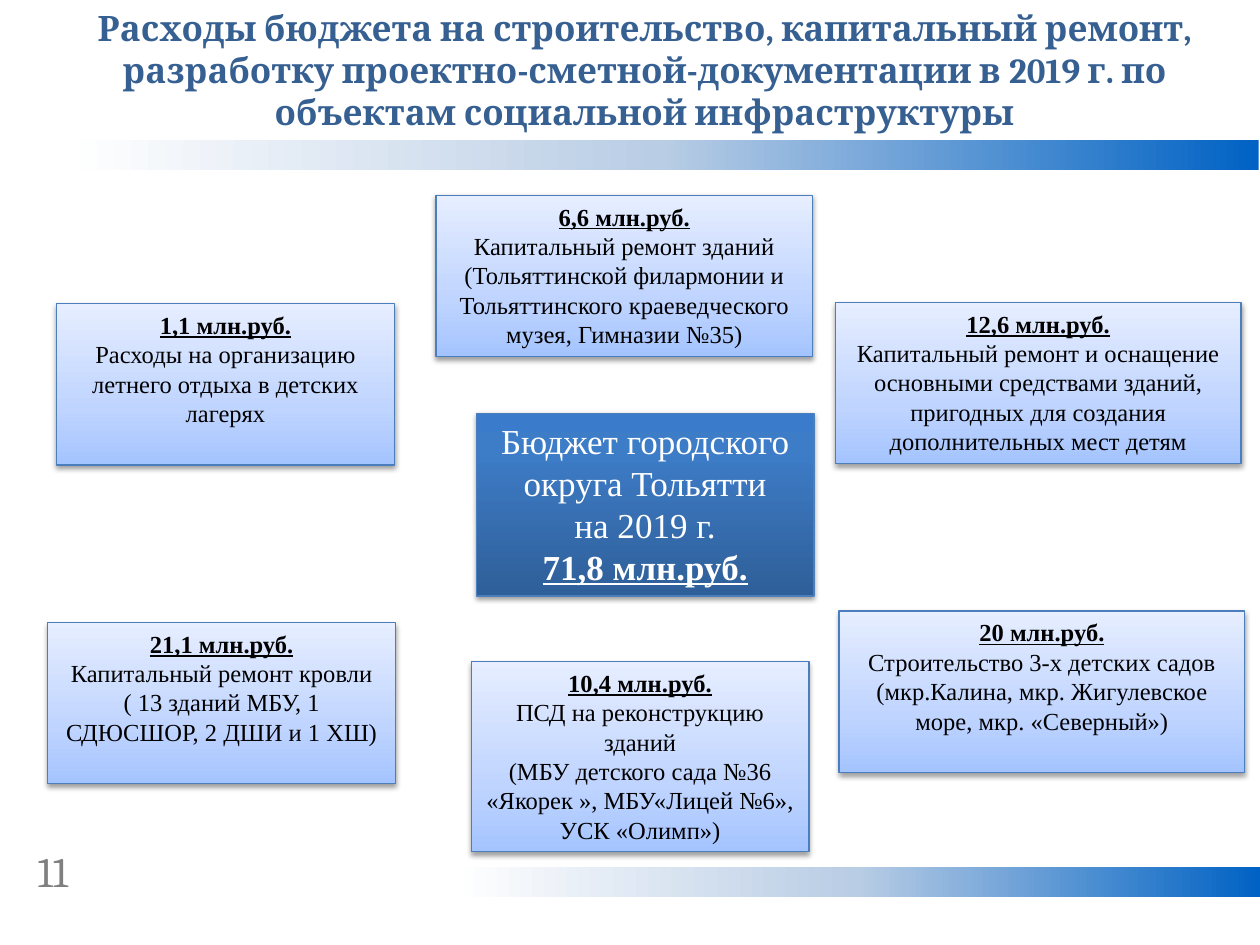
from lxml import etree
from pptx import Presentation
from pptx.dml.color import RGBColor
from pptx.enum.shapes import MSO_SHAPE
from pptx.enum.text import MSO_ANCHOR, MSO_AUTO_SIZE, PP_ALIGN
from pptx.oxml import parse_xml
from pptx.oxml.ns import nsdecls
from pptx.util import Inches, Pt

COLORS = {"title": "376092", "number": "808080", "outline": "4B7EBC",
          "dark": "000000", "light": "FFFFFF"}
BAND = [(0, "0062C4"), (50, "B9CDE5"), (100, "FFFFFF")]
PALE = [(0, "A4C4FF"), (35, "BFD4FF"), (100, "E6EEFF")]
DEEP = [(0, "2F5F99"), (80, "3D7CC7"), (100, "3A7CCB")]


def add_gradient_box(place, stops, angle):
    box = slide.shapes.add_shape(MSO_SHAPE.RECTANGLE, *map(Inches, place))
    box.shadow.inherit = False
    box.line.fill.background()
    stop_xml = "".join(f'<a:gs pos="{pos * 1000}"><a:srgbClr val="{color}"/></a:gs>'
                       for pos, color in stops)
    box._element.spPr.insert(2, parse_xml(
        f'<a:gradFill {nsdecls("a")} rotWithShape="1"><a:gsLst>{stop_xml}</a:gsLst>'
        f'<a:lin ang="{angle * 60000}" scaled="0"/></a:gradFill>'))
    return box


def style(paragraph, font_name, size, color, bold=False, underline=False):
    font = paragraph.font
    font.name, font.size = font_name, Pt(size)
    font.bold, font.underline = bold, underline
    font.color.rgb = RGBColor.from_string(COLORS[color])


prs = Presentation()
prs.slide_width, prs.slide_height = Inches(10), Inches(7.5)
slide = prs.slides.add_slide(prs.slide_layouts[5])

for band in [(0.5, 1.11, 9.49, 0.24), (3.58, 6.88, 6.42, 0.24)]:
    add_gradient_box(band, BAND, 180)

title = slide.shapes.title
title.left, title.top, title.width, title.height = map(Inches, (0.35, 0, 9.53, 1.11))
title.text_frame.text = ("Расходы бюджета на строительство, капитальный ремонт, "
                         "разработку проектно-сметной-документации в 2019 г. по "
                         "объектам социальной инфраструктуры")
title.text_frame.auto_size = MSO_AUTO_SIZE.NONE
title.text_frame.vertical_anchor = MSO_ANCHOR.TOP
title.text_frame.paragraphs[0].alignment = PP_ALIGN.CENTER
style(title.text_frame.paragraphs[0], "Cambria", 20, "title", bold=True)

page_number = slide.shapes.add_textbox(*map(Inches, (0.2, 6.66, 0.78, 0.5))).text_frame
page_number.word_wrap = True
page_number.text = "11"
style(page_number.paragraphs[0], "Cambria", 24, "number")

expenses = [
    ((0.38, 4.94, 2.76, 1.28),
     ["21,1 млн.руб.", "Капитальный ремонт кровли",
      "( 13 зданий МБУ, 1\vСДЮСШОР, 2 ДШИ и 1 ХШ)"]),
    ((3.46, 1.55, 2.99, 1.28),
     ["6,6 млн.руб.", "Капитальный ремонт зданий",
      "(Тольяттинской филармонии и Тольяттинского краеведческого музея, Гимназии №35)"]),
    ((6.66, 4.85, 3.22, 1.28),
     ["20 млн.руб.", "Строительство 3-х детских садов (мкр.Калина, "
      "мкр. Жигулевское море, мкр. «Северный»)"]),
    ((3.74, 5.25, 2.68, 1.51),
     ["10,4 млн.руб.", "ПСД на реконструкцию зданий",
      "(МБУ детского сада №36 «Якорек », МБУ«Лицей №6», УСК «Олимп»)"]),
    ((0.45, 2.41, 2.68, 1.28),
     ["1,1 млн.руб.", "Расходы на организацию летнего отдыха в детских лагерях"]),
    ((6.63, 2.4, 3.22, 1.28),
     ["12,6 млн.руб.", "Капитальный ремонт и оснащение основными средствами зданий, "
      "пригодных для создания дополнительных мест детям"]),
]
total = ((3.78, 3.28, 2.68, 1.45),
         ["Бюджет городского округа Тольятти", "на 2019 г.", "71,8 млн.руб."])

cards = [(*expense, PALE, 14, "dark", 0) for expense in expenses]
cards.append((*total, DEEP, 20, "light", 2))

for place, lines, stops, size, color, amount_row in cards:
    card = add_gradient_box(place, stops, 270)
    card.line.color.rgb = RGBColor.from_string(COLORS["outline"])
    card.line.width = Pt(0.75)
    effects = card._element.spPr.find("{*}effectLst")
    effects.append(parse_xml(
        f'<a:outerShdw {nsdecls("a")} blurRad="{Pt(3.1)}" dist="{Pt(1.6)}" dir="5400000" '
        'rotWithShape="0"><a:srgbClr val="000000"><a:alpha val="38000"/></a:srgbClr>'
        '</a:outerShdw>'))
    card_text = card.text_frame
    card_text.word_wrap = True
    card_text.vertical_anchor = MSO_ANCHOR.TOP
    card_text.text = "\n".join(lines)
    for row, paragraph in enumerate(card_text.paragraphs):
        is_amount = row == amount_row
        paragraph.alignment = PP_ALIGN.CENTER
        style(paragraph, "Times New Roman", size, color, is_amount, is_amount)

prs.save("out.pptx")
